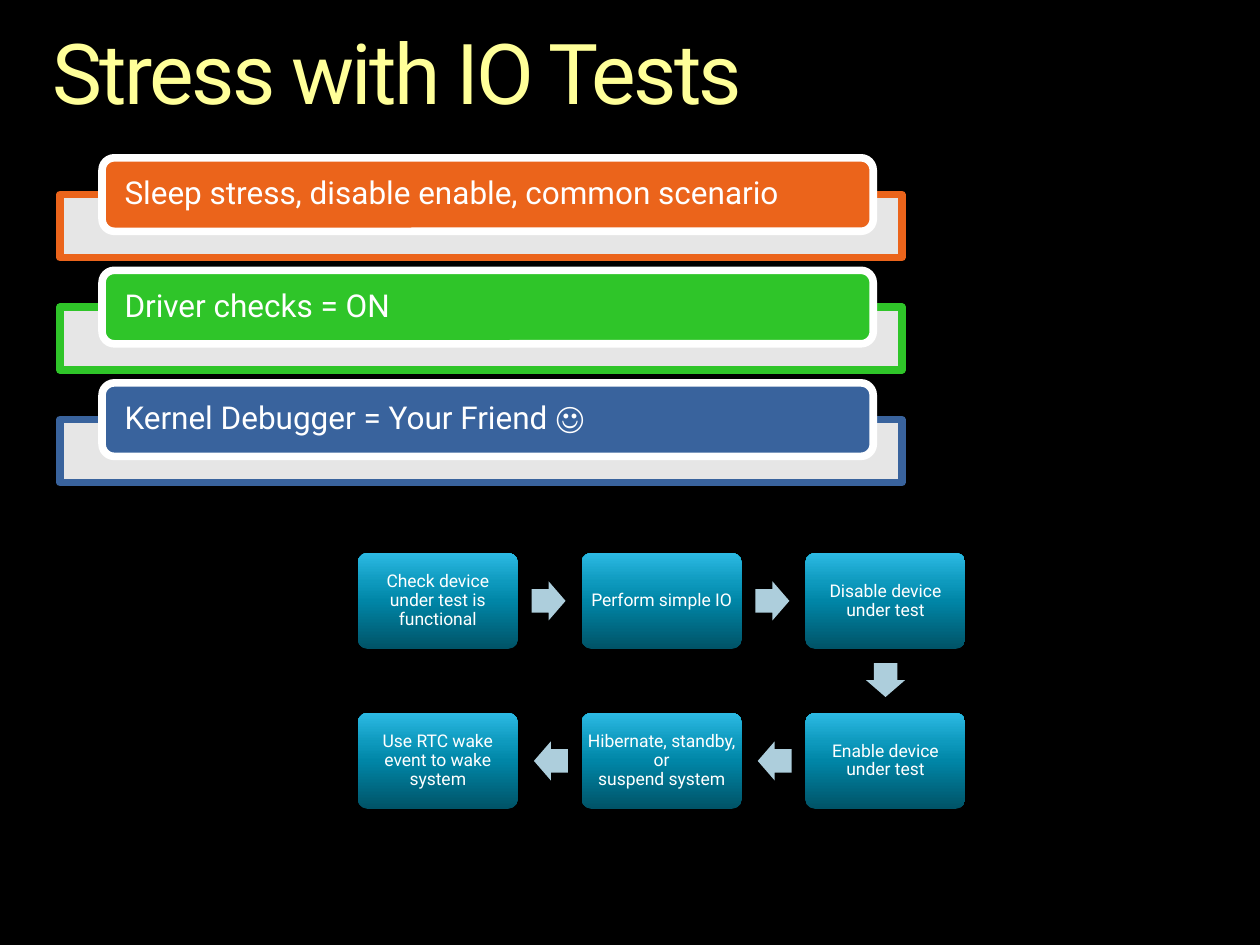
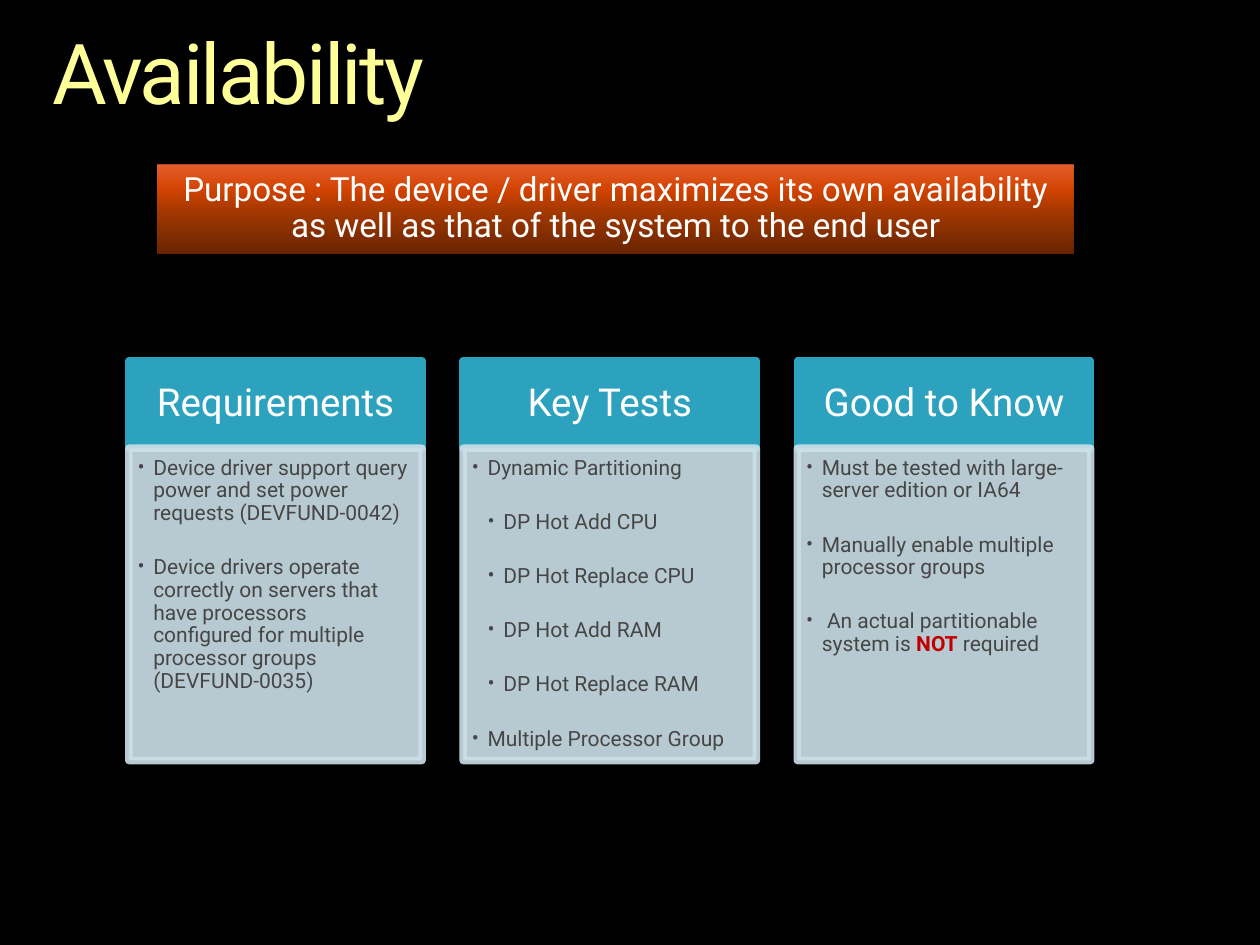
import math

from lxml import etree
from pptx import Presentation
from pptx.dml.color import RGBColor
from pptx.enum.shapes import MSO_SHAPE
from pptx.enum.text import MSO_ANCHOR, PP_ALIGN
from pptx.oxml.ns import qn
from pptx.util import Pt

RECT = MSO_SHAPE.RECTANGLE
ROUNDED = MSO_SHAPE.ROUNDED_RECTANGLE
ARROW = MSO_SHAPE.RIGHT_ARROW
TOP, MIDDLE = MSO_ANCHOR.TOP, MSO_ANCHOR.MIDDLE
LEFT, CENTER = PP_ALIGN.LEFT, PP_ALIGN.CENTER

FONT = "Roboto"
COLORS = {
    "background": "000000",
    "title": "FFFF99",
    "white": "FFFFFF",
    "orange": "EB641B",
    "green": "2FC529",
    "blue": "39639D",
    "arrow": "ADCEDC",
    "header": "2DA2BF",
    "panel": "CDE0E8",
    "body": "464646",
    "alert": "C00000",
}
STEP_GRADIENT = [(0, "005367"), (50, "0086A7"), (70, "0E9ABE"), (100, "2CB9E3")]
PURPOSE_GRADIENT = [(0, "732800"), (50, "B94100"), (70, "E64900"), (100, "FF6933")]
BORDER = 4.33

STRESS_TITLE = "Stress with IO Tests"
STRESS_TIPS = [
    ("Sleep stress, disable enable, common scenario", "orange"),
    ("Driver checks = ON", "green"),
    ("Kernel Debugger = Your Friend ☺", "blue"),
]
TEST_STEPS = [
    ("Check device under test is functional", 0, 0),
    ("Perform simple IO", 1, 0),
    ("Disable device under test", 2, 0),
    ("Enable device under test", 2, 1),
    ("Hibernate, standby, or\nsuspend system", 1, 1),
    ("Use RTC wake event to wake system", 0, 1),
]

AVAILABILITY_TITLE = "Availability"
PURPOSE = ("Purpose : The device / driver maximizes its own availability "
           "as well as that of the system to the end user")
TOPICS = [
    ("Requirements", [
        (1, ["Device driver support query power and set power requests (DEVFUND-0042)"]),
        (1, ["Device drivers operate correctly on servers that have processors "
             "configured for multiple processor groups (DEVFUND-0035)"]),
    ]),
    ("Key Tests", [
        (1, ["Dynamic Partitioning"]),
        (2, ["DP Hot Add CPU"]),
        (2, ["DP Hot Replace CPU"]),
        (2, ["DP Hot Add RAM"]),
        (2, ["DP Hot Replace RAM"]),
        (1, ["Multiple Processor Group"]),
    ]),
    ("Good to Know", [
        (1, ["Must be tested with large-server edition or IA64"]),
        (1, ["Manually enable multiple processor groups"]),
        (1, [" An actual partitionable system is ", ("NOT", "alert"), " required"]),
    ]),
]


def rgb(color):
    return RGBColor.from_string(COLORS[color])


def add_block(slide, kind, x, y, w, h, fill=None, line=None):
    block = slide.shapes.add_shape(kind, Pt(x), Pt(y), Pt(w), Pt(h))
    block.shadow.inherit = False
    if fill:
        block.fill.solid()
        block.fill.fore_color.rgb = rgb(fill)
    set_line(block, line)
    return block


def set_line(block, color):
    if color:
        block.line.color.rgb = rgb(color)
        block.line.width = Pt(BORDER)
    else:
        block.line.fill.background()


def set_gradient(block, stops):
    block.fill.gradient()
    block.fill.gradient_angle = 90
    stop_list = next(block.element.iter(qn("a:gsLst")))
    for stop in list(stop_list):
        stop_list.remove(stop)
    for position, color in stops:
        stop = etree.SubElement(stop_list, qn("a:gs"), pos=str(position * 1000))
        etree.SubElement(stop, qn("a:srgbClr"), val=color)


def set_opacity(block, percent):
    for color in block.element.spPr.iter(qn("a:srgbClr")):
        etree.SubElement(color, qn("a:alpha"), val=str(percent * 1000))


def prepare_frame(block, margins, anchor):
    frame = block.text_frame
    frame.word_wrap = True
    frame.vertical_anchor = anchor
    (frame.margin_left, frame.margin_top,
     frame.margin_right, frame.margin_bottom) = map(Pt, margins)
    return frame


def add_run(paragraph, text, size, color, bold=False):
    run = paragraph.add_run()
    run.text = text
    run.font.name = FONT
    run.font.size = Pt(size)
    run.font.bold = bold
    run.font.color.rgb = rgb(color)


def write(block, text, size, margins, align=CENTER, anchor=MIDDLE, color="white"):
    paragraph = prepare_frame(block, margins, anchor).paragraphs[0]
    paragraph.alignment = align
    paragraph.line_spacing = 0.9
    for number, line in enumerate(text.split("\n")):
        if number:
            paragraph.add_line_break()
        add_run(paragraph, line, size, color)


def write_bullets(block, items):
    frame = prepare_frame(block, (5, 5, 6.5, 7), TOP)
    for number, (level, parts) in enumerate(items):
        paragraph = frame.add_paragraph() if number else frame.paragraphs[0]
        paragraph.alignment = LEFT
        paragraph.level = level
        paragraph.line_spacing = 0.9
        paragraph.space_after = Pt(18)
        properties = paragraph._p.get_or_add_pPr()
        properties.set("marL", str(Pt(9 * level)))
        properties.set("indent", str(-Pt(9)))
        etree.SubElement(properties, qn("a:buFont"), typeface=FONT)
        etree.SubElement(properties, qn("a:buChar"), char="•")
        for part in parts:
            if isinstance(part, tuple):
                add_run(paragraph, part[0], 12, part[1], bold=True)
            else:
                add_run(paragraph, part, 12, "body")


def add_titled_slide(prs, text):
    slide = prs.slides.add_slide(prs.slide_layouts[5])
    title = slide.shapes.title
    title.left, title.top, title.width, title.height = map(Pt, (30, 18, 660, 52.6))
    write(title, text, 48, (0, 0, 0, 0), LEFT, TOP, "title")
    for properties in title.element.iter(qn("a:rPr")):
        properties.set("spc", "-150")
    return slide


def add_tips(slide):
    for row, (text, color) in enumerate(STRESS_TIPS):
        y = 90.2 + row * 64.3
        slot = add_block(slide, RECT, 34.3, y + 21, 481, 36, "white")
        set_opacity(slot, 90)
        set_line(slot, color)
        tip = add_block(slide, ROUNDED, 58.3, y, 440.7, 42, color, "white")
        write(tip, text, 18, (10.8, 0, 10.8, 0), LEFT)


def add_flow(slide):
    left, top, width, height = 204.5, 316, 91.4, 54.8
    pitch_x, pitch_y = 127.9, 91.4
    arrow_w, arrow_h = 19.4, 22.4
    corners = [(left + col * pitch_x, top + row * pitch_y) for _, col, row in TEST_STEPS]
    for (text, _, _), (x, y) in zip(TEST_STEPS, corners):
        step = add_block(slide, ROUNDED, x, y, width, height)
        step.adjustments[0] = 0.1
        set_gradient(step, STEP_GRADIENT)
        write(step, text, 10, (1.2, 1.2, 1.2, 1.2))
    for (x, y), (next_x, next_y) in zip(corners, corners[1:]):
        dx, dy = next_x - x, next_y - y
        center_x = x + width / 2 + dx * 0.495
        center_y = y + height / 2 + dy * 0.495
        arrow = add_block(slide, ARROW, center_x - arrow_w / 2, center_y - arrow_h / 2,
                          arrow_w, arrow_h, "arrow")
        arrow.adjustments[0] = 0.6
        arrow.adjustments[1] = 0.5
        arrow.rotation = math.degrees(math.atan2(dy, dx))


def add_topics(slide):
    for column, (heading, items) in enumerate(TOPICS):
        x = 73.6 + column * 191
        header = add_block(slide, RECT, x, 206.2, 167.6, 50, "header", "header")
        write(header, heading, 22, (12, 7, 12, 7))
        panel = add_block(slide, RECT, x, 256.2, 167.6, 178.4, "panel", "panel")
        set_opacity(panel, 90)
        write_bullets(panel, items)


def add_purpose(slide):
    purpose = add_block(slide, RECT, 90, 94, 523.6, 50.8)
    set_gradient(purpose, PURPOSE_GRADIENT)
    set_opacity(purpose, 90)
    write(purpose, PURPOSE, 19, (5.8, 5.8, 5.8, 5.8))


def main():
    prs = Presentation()
    prs.slide_width, prs.slide_height = Pt(720), Pt(540)
    background = prs.slide_master.background.fill
    background.solid()
    background.fore_color.rgb = rgb("background")

    stress = add_titled_slide(prs, STRESS_TITLE)
    add_flow(stress)
    add_tips(stress)

    availability = add_titled_slide(prs, AVAILABILITY_TITLE)
    add_topics(availability)
    add_purpose(availability)

    prs.save("out.pptx")


if __name__ == "__main__":
    main()
